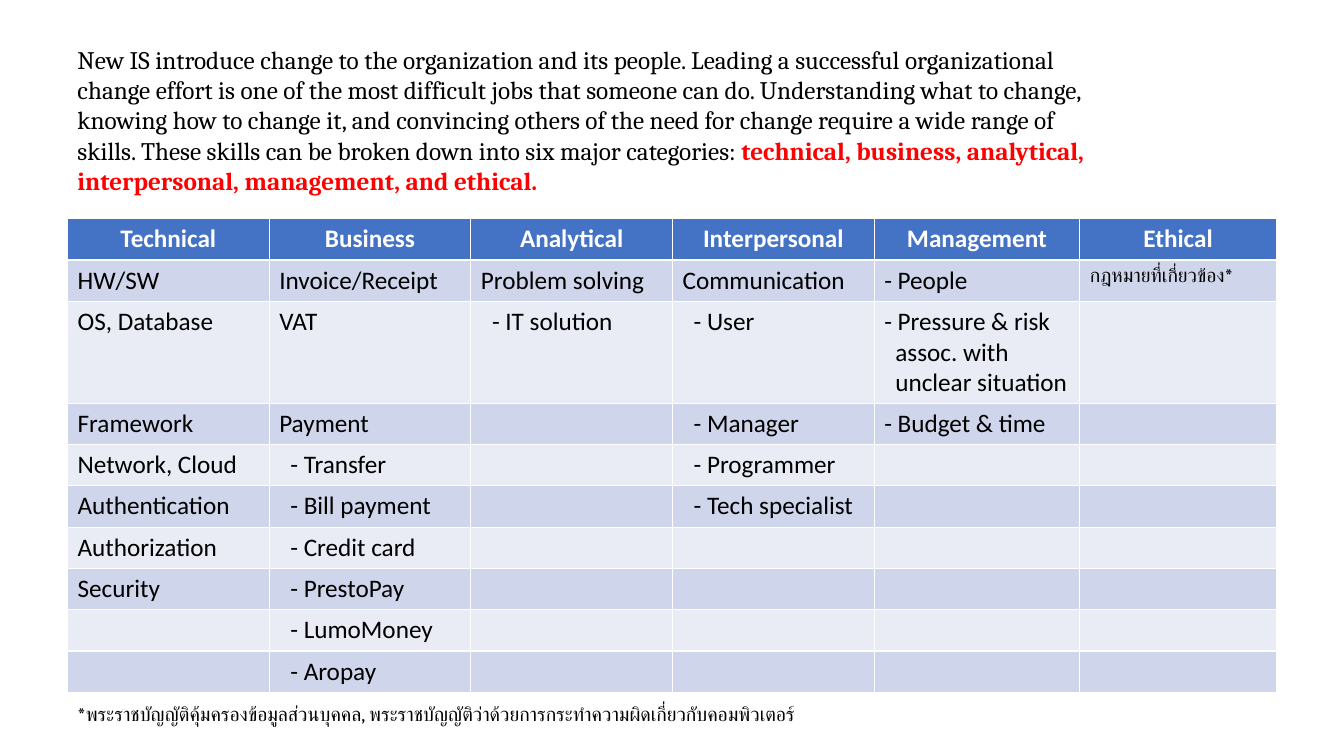
from pptx import Presentation
from pptx.dml.color import RGBColor
from pptx.enum.text import MSO_AUTO_SIZE, PP_ALIGN
from pptx.util import Inches, Pt

BLACK = RGBColor(0x00, 0x00, 0x00)
WHITE = RGBColor(0xFF, 0xFF, 0xFF)
RED = RGBColor(0xFF, 0x00, 0x00)
HEADER_BLUE = RGBColor(0x44, 0x72, 0xC4)
BANDS = [RGBColor(0xCF, 0xD5, 0xEA), RGBColor(0xE9, 0xEB, 0xF5)]

LEFT, WIDTH = 0.67, 11.99
INDENT = Inches(0.11)
COL_WIDTHS = [2, 2, 2, 2, 2.04, 1.95]
ROW_HEIGHT, TALL_ROW_HEIGHT = 0.41, 1.01

INTRO = [
    [("New IS introduce change to the organization and its people. Leading a successful organizational", {})],
    [("change effort is one of the most difficult jobs that someone can do. Understanding what to change,", {})],
    [("knowing how to change it, and convincing others of the need for change require a wide range of", {})],
    [("skills. These skills can be broken down into six major categories: ", {}),
     ("technical, business, analytical,", {"color": RED, "bold": True})],
    [("interpersonal, management, and ethical.", {"color": RED, "bold": True})],
]
FOOTNOTE = ("*พระราชบัญญัติคุ้มครองข้อมูลส่วนบุคคล, "
            "พระราชบัญญัติว่าด้วยการกระทำความผิดเกี่ยวกับคอมพิวเตอร์")
LAW_NOTE = "กฎหมายที่เกี่ยวข้อง*"

# Skills by category, top to bottom
SKILLS = {
    "Technical": ["HW/SW", "OS, Database", "Framework", "Network, Cloud",
                  "Authentication", "Authorization", "Security"],
    "Business": ["Invoice/Receipt", "VAT", "Payment", "- Transfer", "- Bill payment",
                 "- Credit card", "- PrestoPay", "- LumoMoney", "- Aropay"],
    "Analytical": ["Problem solving", "- IT solution"],
    "Interpersonal": ["Communication", "- User", "- Manager", "- Programmer",
                      "- Tech specialist"],
    "Management": ["- People", "- Pressure & risk\vassoc. with\vunclear situation",
                   "- Budget & time"],
    "Ethical": [LAW_NOTE],
}
SKILL_ROWS = max(len(skills) for skills in SKILLS.values())


def style_font(font, color=BLACK, **attrs):
    for name, value in attrs.items():
        setattr(font, name, value)
    font.color.rgb = color


def add_text(slide, box, paragraphs, size):
    s = slide.shapes.add_textbox(*map(Inches, box))
    tf = s.text_frame
    tf.word_wrap = True
    tf.auto_size = MSO_AUTO_SIZE.SHAPE_TO_FIT_TEXT
    for i, runs in enumerate(paragraphs):
        p = tf.add_paragraph() if i else tf.paragraphs[0]
        for text, look in runs:
            r = p.add_run()
            r.text = text
            style_font(r.font, **{"name": "Cambria", "size": Pt(size), **look})


def fill_cell(cell, text, fill, **look):
    cell.fill.solid()
    cell.fill.fore_color.rgb = fill
    p = cell.text_frame.paragraphs[0]
    p.text = text
    style_font(p.font, **look)
    for r in p.runs:
        style_font(r.font, **look)
    return p


def indent_item(p, hanging):
    """Indent a dashed item, or only its continuation lines if hanging."""
    pPr = p._p.get_or_add_pPr()
    pPr.set("marL", str(INDENT))
    pPr.set("indent", str(-INDENT if hanging else 0))


def add_skills_table(slide, box):
    table = slide.shapes.add_table(SKILL_ROWS + 1, len(SKILLS), *map(Inches, box)).table
    for column, width in zip(table.columns, COL_WIDTHS):
        column.width = Inches(width)
    for i, row in enumerate(table.rows):
        row.height = Inches(TALL_ROW_HEIGHT if i == 2 else ROW_HEIGHT)

    body = {"name": "Calibri", "size": Pt(18), "bold": False}
    header = {**body, "bold": True, "color": WHITE}
    law = {**body, "name": "Cambria", "size": Pt(14)}
    for col, (category, skills) in enumerate(SKILLS.items()):
        p = fill_cell(table.cell(0, col), category, HEADER_BLUE, **header)
        p.alignment = PP_ALIGN.CENTER
        for i in range(SKILL_ROWS):
            text = skills[i] if i < len(skills) else ""
            p = fill_cell(table.cell(i + 1, col), text, BANDS[i % 2],
                          **(law if text == LAW_NOTE else body))
            if text.startswith("-"):
                indent_item(p, hanging=category == "Management")


def main():
    prs = Presentation()
    prs.slide_width, prs.slide_height = Inches(13.33), Inches(7.5)
    slide = prs.slides.add_slide(prs.slide_layouts[6])
    add_text(slide, (LEFT, 0.39, WIDTH, 1.62), INTRO, 18)
    add_skills_table(slide, (LEFT, 2.17, WIDTH, 4.65))
    add_text(slide, (LEFT, 6.91, WIDTH, 0.34), [[(FOOTNOTE, {})]], 14)
    prs.save("out.pptx")


if __name__ == "__main__":
    main()
